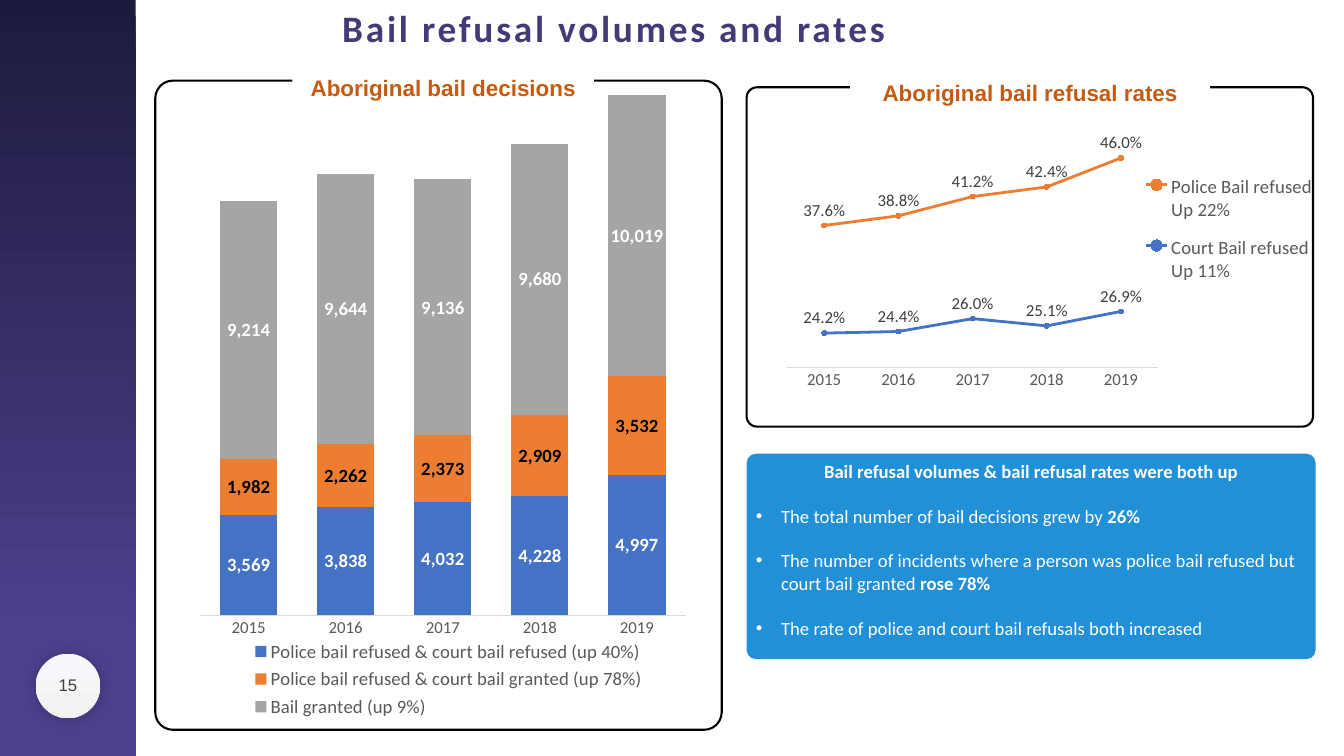
from lxml import etree
from pptx import Presentation
from pptx.chart.data import CategoryChartData
from pptx.dml.color import RGBColor
from pptx.enum.chart import (XL_CHART_TYPE as CHART, XL_LABEL_POSITION as LABEL,
                             XL_LEGEND_POSITION as LEGEND, XL_MARKER_STYLE as MARKER,
                             XL_TICK_MARK as TICK)
from pptx.enum.shapes import MSO_SHAPE as SHAPE
from pptx.enum.text import MSO_ANCHOR as ANCHOR, PP_ALIGN as ALIGN
from pptx.oxml import parse_xml
from pptx.oxml.ns import nsdecls, qn
from pptx.util import Cm, Pt

COLORS = {
    "white": "FFFFFF", "black": "000000", "night": "1C1B3D", "violet": "4F408E",
    "title": "453977", "heading": "C55A11", "callout": "2190D7",
    "badge_top": "F6F8FC", "badge_end": "F2F2F2", "dark": "404040",
    "axis_text": "595959", "axis_line": "D9D9D9",
    "blue": "4472C4", "orange": "ED7D31", "grey": "A5A5A5",
}
YEARS = ["2015", "2016", "2017", "2018", "2019"]


def rgb(name):
    return RGBColor.from_string(COLORS[name])


def style_font(font, size, color, bold=False, name="Calibri"):
    font.name, font.size, font.bold = name, Pt(size), bold
    font.color.rgb = rgb(color)


def write(tf, runs, size=20, color="white", bold=False, font="Calibri",
          align=ALIGN.CENTER, spacing=0, before=0, bullet=False, add=False):
    """Write one paragraph; runs is a string or a list of (text, bold)."""
    p = tf.add_paragraph() if add else tf.paragraphs[0]
    p.alignment = align
    if before:
        p.space_before = Pt(before)
    if bullet:
        pPr = p._p.get_or_add_pPr()
        pPr.set("marL", str(Cm(0.95)))
        pPr.set("indent", str(-Cm(0.95)))
        etree.SubElement(pPr, qn("a:buFont")).set("typeface", "Arial")
        etree.SubElement(pPr, qn("a:buChar")).set("char", "•")
    for text, strong in [(runs, bold)] if isinstance(runs, str) else runs:
        r = p.add_run()
        r.text = text
        style_font(r.font, size, color, strong, font)
        if spacing:
            r._r.get_or_add_rPr().set("spc", str(spacing * 100))


def set_layout(parent, index, box, inner=False):
    """Give a chart part a fixed place, in fractions of the chart."""
    for old in parent.findall(qn("c:layout")):
        parent.remove(old)
    target = '<c:layoutTarget val="inner"/>' if inner else ""
    modes = "".join(f'<c:{k}Mode val="edge"/>' for k in "xy")
    sizes = "".join(f'<c:{k} val="{v}"/>' for k, v in zip("xywh", box))
    parent.insert(index, parse_xml(
        f'<c:layout {nsdecls("c")}><c:manualLayout>{target}{modes}{sizes}'
        '</c:manualLayout></c:layout>'))


class Deck:
    def __init__(self):
        self.prs = Presentation()
        self.prs.slide_width, self.prs.slide_height = Cm(50.8), Cm(28.58)
        self.s = self.prs.slides.add_slide(self.prs.slide_layouts[6])

    def shape(self, kind, box, fill=None, line=None, radius=None):
        sp = self.s.shapes.add_shape(kind, *map(Cm, box))
        sp.shadow.inherit = False
        if isinstance(fill, tuple):
            sp.fill.gradient()
            sp.fill.gradient_angle = 270
            for stop, (color, pos) in zip(sp.fill.gradient_stops, fill):
                stop.color.rgb, stop.position = rgb(color), pos
        elif fill:
            sp.fill.solid()
            sp.fill.fore_color.rgb = rgb(fill)
        else:
            sp.fill.background()
        if line:
            sp.line.color.rgb, sp.line.width = rgb(line), Pt(2.25)
        else:
            sp.line.fill.background()
        if radius is not None:
            sp.adjustments[0] = radius
        sp.text_frame.word_wrap = True
        sp.text_frame.vertical_anchor = ANCHOR.TOP
        return sp

    def text(self, box, text, anchor=ANCHOR.TOP, wrap=True, **fmt):
        tf = self.s.shapes.add_textbox(*map(Cm, box)).text_frame
        tf.word_wrap, tf.vertical_anchor = wrap, anchor
        write(tf, text, **fmt)

    def panel(self, frame, label, heading):
        self.shape(SHAPE.ROUNDED_RECTANGLE, frame, line="black", radius=0.031)
        tf = self.shape(SHAPE.RECTANGLE, label, "white").text_frame
        tf.margin_left = tf.margin_right = Cm(0.28)
        tf.margin_top = tf.margin_bottom = Cm(0.15)
        write(tf, heading, size=24, color="heading", bold=True, font="Arial")

    def chart(self, kind, box, series, fmt, low, high, plot_box, legend_pos, legend_box):
        """series holds (name, colour, label colour, values)."""
        data = CategoryChartData(number_format=fmt)
        data.categories = YEARS
        for name, _, _, values in series:
            data.add_series(name, values)
        chart = self.s.shapes.add_chart(kind, *map(Cm, box), data).chart
        chart.has_title = False
        style_font(chart.font, 18, "axis_text")

        # Axes
        cat, val = chart.category_axis, chart.value_axis
        cat.major_tick_mark = cat.minor_tick_mark = TICK.NONE
        cat.format.line.color.rgb, cat.format.line.width = rgb("axis_line"), Pt(0.75)
        style_font(cat.tick_labels.font, 18, "axis_text")
        val.visible = val.has_major_gridlines = False
        val.minimum_scale, val.maximum_scale = low, high

        # Legend and fixed places
        chart.has_legend = True
        chart.legend.position = legend_pos
        chart.legend.include_in_layout = False
        style_font(chart.legend.font, 20, "axis_text")
        set_layout(chart.element.find(".//" + qn("c:plotArea")), 0, plot_box, inner=True)
        set_layout(chart.element.find(".//" + qn("c:legend")), 1, legend_box)

        # Series
        plot, is_line = chart.plots[0], kind == CHART.LINE_MARKERS
        plot.vary_by_categories = False
        if not is_line:
            plot.gap_width, plot.overlap = 70, 100
        for ser, (_, color, label_color, _) in zip(plot.series, series):
            if is_line:
                ser.smooth = False
                ser.format.line.color.rgb, ser.format.line.width = rgb(color), Pt(3)
                ser.marker.style, ser.marker.size = MARKER.CIRCLE, 5
                fills = [ser.marker.format.fill]
                ser.marker.format.line.color.rgb = rgb(color)
            else:
                fills = [ser.format.fill]
            for fill in fills:
                fill.solid()
                fill.fore_color.rgb = rgb(color)
            labels = ser.data_labels
            labels.show_value = True
            labels.number_format, labels.number_format_is_linked = fmt, False
            labels.position = LABEL.ABOVE if is_line else LABEL.CENTER
            style_font(labels.font, 18 if is_line else 20, label_color, not is_line)


def main():
    d = Deck()

    # Side band and page number
    d.shape(SHAPE.RECTANGLE, (0, 0, 5.13, 28.58), (("night", 0), ("violet", 0.85)))
    badge = d.shape(SHAPE.OVAL, (1.35, 24.71, 2.44, 2.44), (("badge_top", 0), ("badge_end", 1)))
    glow = etree.SubElement(badge._element.spPr.find(qn("a:effectLst")), qn("a:outerShdw"),
                            blurRad=str(Pt(22)), dist="0", dir="0")
    tint = etree.SubElement(glow, qn("a:srgbClr"), val=COLORS["black"])
    etree.SubElement(tint, qn("a:alpha"), val="24000")
    d.text((1.35, 24.89, 2.44, 1.98), "15", ANCHOR.MIDDLE, size=18, color="dark", font="Arial")

    # Title
    d.text((12.52, 0.08, 21.39, 1.96), "Bail refusal volumes and rates", wrap=False,
           size=40, color="title", bold=True, spacing=3)

    # Bail decisions
    d.panel((5.87, 3.05, 21.41, 24.54), (11.05, 2.64, 11.4, 1.32), "Aboriginal bail decisions")
    d.chart(CHART.COLUMN_STACKED, (6.22, 2.06, 22.38, 25.53), [
        ("Police bail refused & court bail refused (up 40%)", "blue", "white",
         (3569, 3838, 4032, 4228, 4997)),
        ("Police bail refused & court bail granted (up 78%)", "orange", "black",
         (1982, 2262, 2373, 2909, 3532)),
        ("Bail granted (up 9%)", "grey", "white", (9214, 9644, 9136, 9680, 10019)),
    ], "#,##0", 0, 20000, (0.06, 0, 0.82, 0.83), LEGEND.BOTTOM, (0.13, 0.86, 0.7, 0.13))

    # Refusal rates
    d.panel((28.22, 3.3, 21.41, 12.83), (32.13, 2.84, 13.61, 1.6), "Aboriginal bail refusal rates")
    d.chart(CHART.LINE_MARKERS, (29.34, 3.56, 20.62, 11.99), [
        ("Police Bail refused Up 22%", "orange", "dark", (0.376, 0.388, 0.412, 0.424, 0.46)),
        ("Court Bail refused Up 11%", "blue", "dark", (0.242, 0.244, 0.26, 0.251, 0.269)),
    ], "0.0%", 0.2, 0.5, (0.02, 0.1, 0.68, 0.76), LEGEND.RIGHT, (0.67, 0.21, 0.32, 0.43))

    # Key findings
    tf = d.shape(SHAPE.ROUNDED_RECTANGLE, (28.22, 17.15, 21.51, 7.77), "callout",
                 radius=0.046).text_frame
    write(tf, "Bail refusal volumes & bail refusal rates were both up", bold=True)
    for lead, strong in [
        ("The total number of bail decisions grew by ", "26%"),
        ("The number of incidents where a person was police bail refused but "
         "court bail granted ", "rose 78%"),
        ("The rate of police and court bail refusals both increased", ""),
    ]:
        runs = [(lead, False)] + ([(strong, True)] if strong else [])
        write(tf, runs, align=ALIGN.LEFT, before=24, bullet=True, add=True)

    d.prs.save("out.pptx")


if __name__ == "__main__":
    main()
